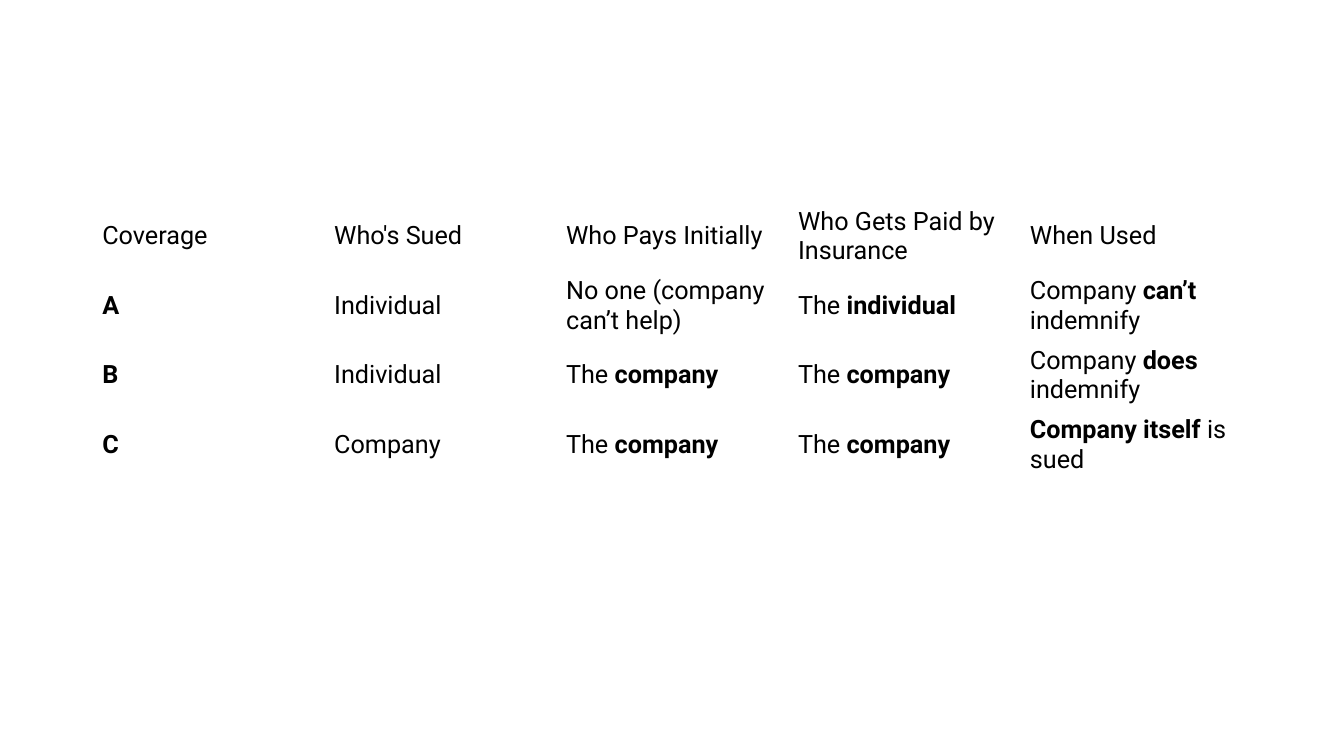
from pptx import Presentation
from pptx.dml.color import RGBColor
from pptx.enum.text import MSO_ANCHOR as Anchor
from pptx.util import Inches, Pt

BLACK = RGBColor(0, 0, 0)
WHITE = RGBColor(255, 255, 255)
WIDE, HIGH = 13.33, 7.5
COL, ROW = 2.3, 0.69

COVER = [
    ["Coverage", "Who's Sued", "Who Pays Initially",
     "Who Gets Paid by Insurance", "When Used"],
    ["*A*", "Individual", "No one (company can’t help)",
     "The *individual*", "Company *can’t* indemnify"],
    ["*B*", "Individual", "The *company*",
     "The *company*", "Company *does* indemnify"],
    ["*C*", "Company", "The *company*",
     "The *company*", "*Company itself* is sued"],
]


def write(frame, text, size=18, font="Roboto", color=BLACK):
    """Write text into a frame, with the parts between asterisks in bold."""
    line = frame.paragraphs[0]
    for turn, part in enumerate(text.split("*")):
        if part:
            run = line.add_run()
            run.text = part
            run.font.name = font
            run.font.size = Pt(size)
            run.font.bold = turn % 2 == 1
            run.font.color.rgb = color


def grid(slide, rows, left, top):
    """Place a plain table of equal columns and rows at the given corner."""
    wide, high = len(rows[0]), len(rows)
    table = slide.shapes.add_table(
        high, wide, Inches(left), Inches(top),
        Inches(wide * COL), Inches(high * ROW)).table
    table.first_row = False
    table.horz_banding = False
    for col in table.columns:
        col.width = Inches(COL)
    for row, texts in zip(table.rows, rows):
        row.height = Inches(ROW)
        for cell, text in zip(row.cells, texts):
            cell.fill.solid()
            cell.fill.fore_color.rgb = WHITE
            cell.vertical_anchor = Anchor.MIDDLE
            write(cell.text_frame, text)


def main():
    """Build the coverage slide and save it."""
    deck = Presentation()
    deck.slide_width, deck.slide_height = Inches(WIDE), Inches(HIGH)
    slide = deck.slides.add_slide(deck.slide_layouts[6])
    grid(slide, COVER, left=(WIDE - len(COVER[0]) * COL) / 2, top=2)
    deck.save("out.pptx")


if __name__ == "__main__":
    main()
